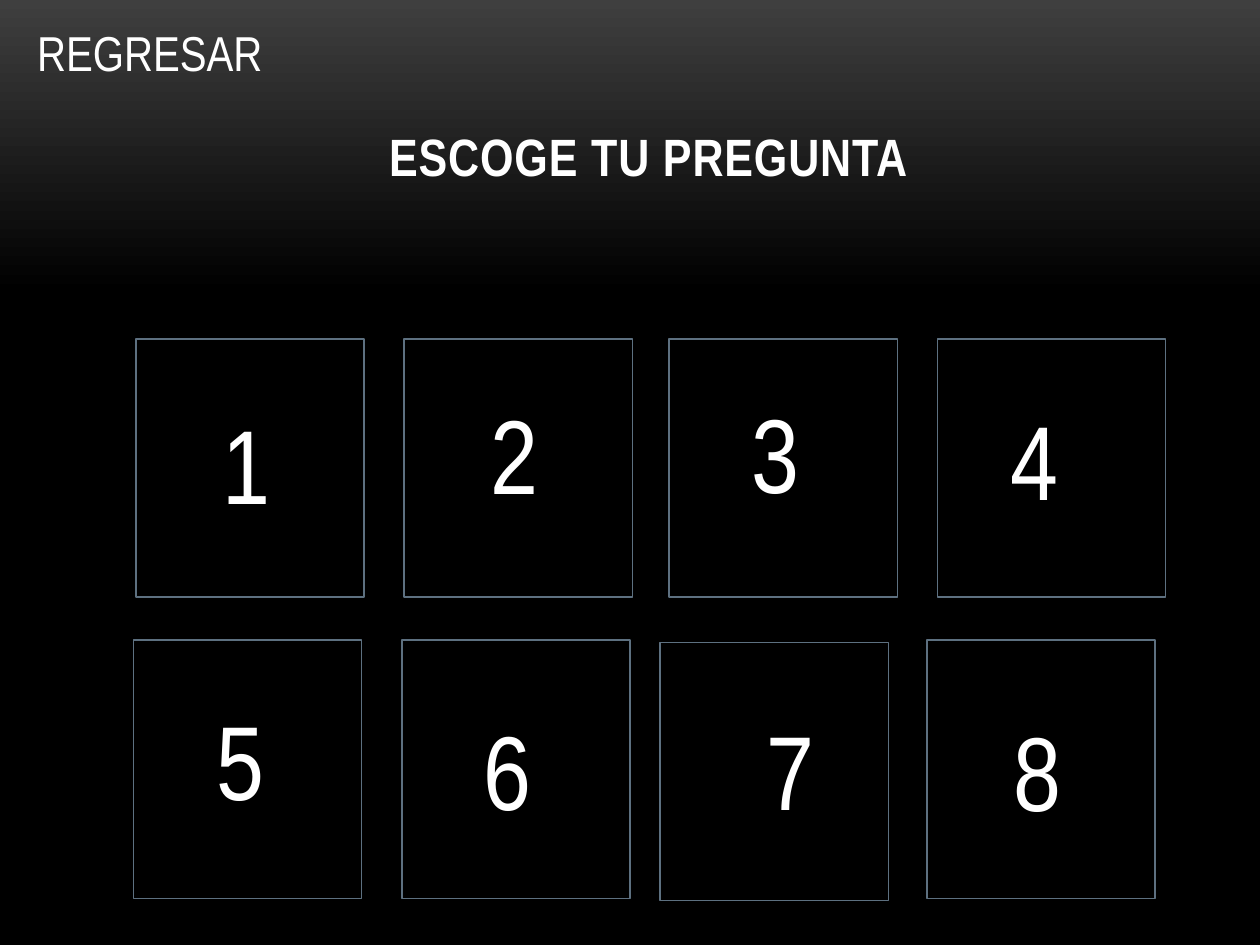
from dataclasses import dataclass

from pptx import Presentation
from pptx import util as u
from pptx.dml.color import RGBColor
from pptx.enum import shapes, text

WHITE = RGBColor(0xFF, 0xFF, 0xFF)
BLACK = RGBColor(0x00, 0x00, 0x00)
CHARCOAL = RGBColor(0x3F, 0x3F, 0x3F)
SLATE = RGBColor(0x5D, 0x70, 0x80)
FONT = "Arial Narrow"
CARD_WIDTH, CARD_HEIGHT = 4.6, 5.21
NUMBER_HEIGHT = 2.82


@dataclass
class Card:
    number: int
    left: float
    top: float
    number_left: float
    number_top: float
    number_width: float


CARDS = [
    Card(1, 2.74, 6.83, 4.24, 7.92, 1.85),
    Card(2, 8.15, 6.83, 9.63, 7.72, 1.8),
    Card(3, 13.49, 6.83, 14.91, 7.7, 1.8),
    Card(4, 18.9, 6.83, 20.12, 7.85, 1.75),
    Card(5, 2.69, 12.9, 4.11, 13.89, 2.18),
    Card(6, 8.1, 12.9, 9.5, 14.1, 1.88),
    Card(7, 13.31, 12.95, 15.21, 14.1, 1.68),
    Card(8, 18.69, 12.9, 20.19, 14.12, 1.68),
]


def format_text(tf, content: str, size: int, bold: bool = False):
    tf.word_wrap = True
    tf.text = content
    p = tf.paragraphs[0]
    p.alignment = text.PP_ALIGN.LEFT
    r = p.runs[0]
    r.font.name = FONT
    r.font.size = u.Pt(size)
    r.font.bold = bold
    r.font.color.rgb = WHITE
    return r


def add_label(s, content: str, size: int, left: float, top: float,
              width: float, height: float) -> None:
    sp = s.shapes.add_textbox(u.Cm(left), u.Cm(top), u.Cm(width), u.Cm(height))
    format_text(sp.text_frame, content, size)
    sp.text_frame.auto_size = text.MSO_AUTO_SIZE.SHAPE_TO_FIT_TEXT


def add_card(s, card: Card) -> None:
    sp = s.shapes.add_shape(shapes.MSO_SHAPE.RECTANGLE, u.Cm(card.left),
                            u.Cm(card.top), u.Cm(CARD_WIDTH), u.Cm(CARD_HEIGHT))
    sp.shadow.inherit = False
    sp.fill.background()
    sp.line.color.rgb = SLATE
    sp.line.width = u.Pt(0.85)
    add_label(s, str(card.number), 60, card.number_left, card.number_top,
              card.number_width, NUMBER_HEIGHT)


def set_background(s) -> None:
    fill = s.background.fill
    fill.gradient()
    fill.gradient_angle = 270
    for stop, position, color in zip(fill.gradient_stops, (0, 0.31), (CHARCOAL, BLACK)):
        stop.position = position
        stop.color.rgb = color


def set_title(s) -> None:
    sp = s.shapes.title
    sp.left, sp.top, sp.width, sp.height = u.Cm(7.59), u.Cm(0.89), u.Cm(11.4), u.Cm(3)
    tf = sp.text_frame
    r = format_text(tf, "ESCOGE TU PREGUNTA", 30, bold=True)
    r.font._element.set("spc", "50")
    tf.vertical_anchor = text.MSO_ANCHOR.BOTTOM
    tf.auto_size = text.MSO_AUTO_SIZE.NONE


def main() -> None:
    prs = Presentation()
    prs.slide_width, prs.slide_height = u.Cm(25.4), u.Cm(19.05)
    s = prs.slides.add_slide(prs.slide_layouts[5])
    set_background(s)
    set_title(s)
    for card in CARDS:
        add_card(s, card)
    add_label(s, "REGRESAR", 28, 0.5, 0.33, 5.6, 1.45)
    prs.save("out.pptx")


if __name__ == "__main__":
    main()
